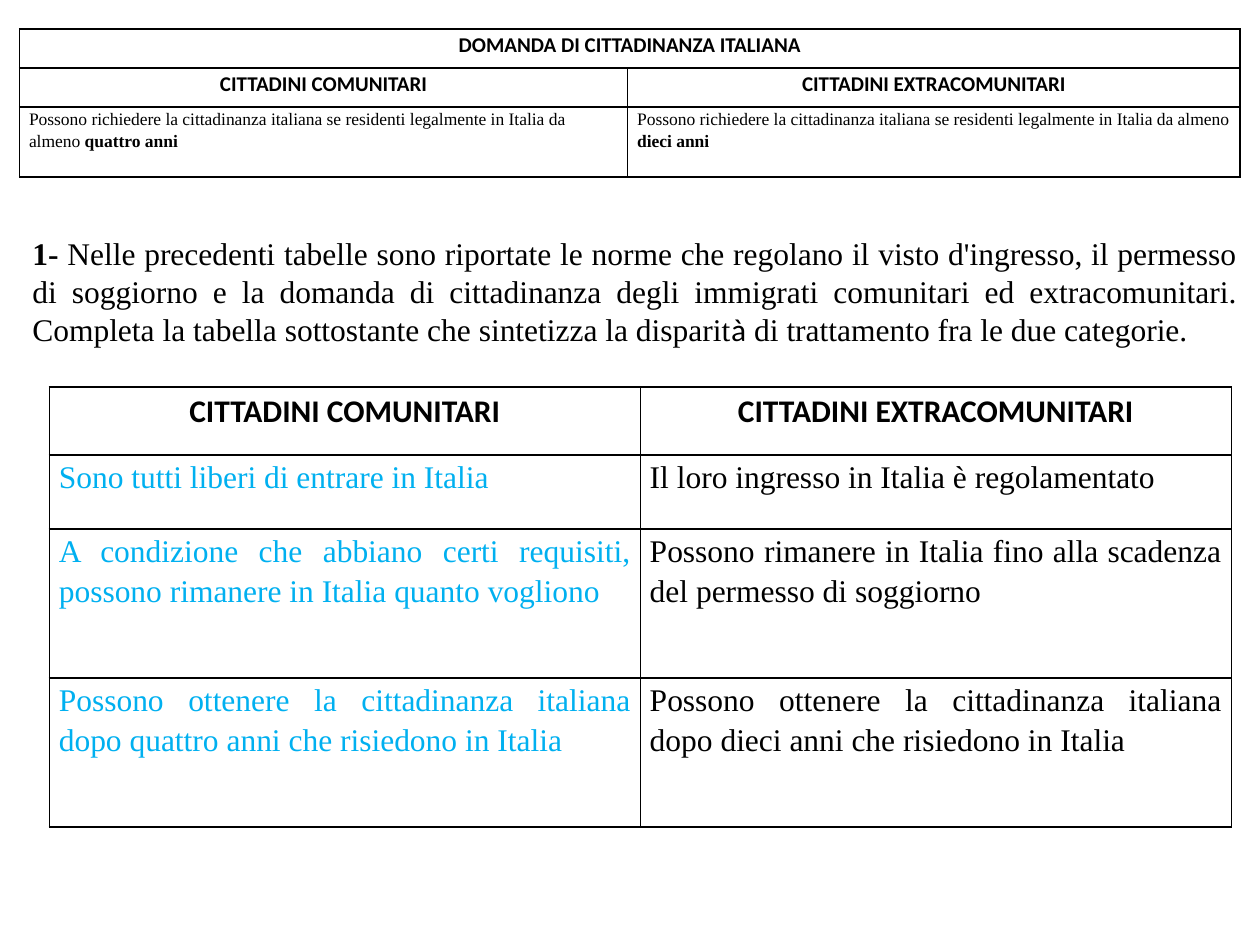
import pptx
import pptx.dml.color
import pptx.enum.text
import pptx.oxml
import pptx.oxml.ns
import pptx.util

Pt = pptx.util.Pt
ALIGN = pptx.enum.text.PP_ALIGN
COLORS = {"ink": "000000", "answer": "00B0F0", "paper": "FFFFFF"}
HEADING, BODY = "Calibri", "Times New Roman"


class SlideBuilder:
    """Hold the style and the current slide, and add its elements."""

    def __init__(self, slide):
        self.slide = slide

    def color(self, name):
        return pptx.dml.color.RGBColor.from_string(COLORS[name])

    def add_runs(self, paragraph, runs, size, align, color="ink"):
        paragraph.alignment = align
        for text, font, bold in runs:
            run = paragraph.add_run()
            run.text = text
            run.font.name = font
            run.font.size = Pt(size)
            run.font.bold = bold
            run.font.color.rgb = self.color(color)

    def add_text(self, left, top, width, height, runs, size):
        frame = self.slide.shapes.add_textbox(Pt(left), Pt(top), Pt(width), Pt(height)).text_frame
        frame.word_wrap = True
        frame.auto_size = pptx.enum.text.MSO_AUTO_SIZE.SHAPE_TO_FIT_TEXT
        frame.vertical_anchor = pptx.enum.text.MSO_ANCHOR.MIDDLE
        self.add_runs(frame.paragraphs[0], runs, size, ALIGN.JUSTIFY)

    def add_table(self, left, top, widths, heights):
        table = self.slide.shapes.add_table(
            len(heights), len(widths), Pt(left), Pt(top), Pt(sum(widths)), Pt(sum(heights))
        ).table
        table.first_row = table.horz_banding = False
        for column, width in zip(table.columns, widths):
            column.width = Pt(width)
        for row, height in zip(table.rows, heights):
            row.height = Pt(height)
        for cell in table.iter_cells():
            self.frame_cell(cell)
        return table

    def frame_cell(self, cell):
        properties = cell._tc.get_or_add_tcPr()
        for side in ("lnL", "lnR", "lnT", "lnB"):
            properties.append(pptx.oxml.parse_xml(
                f'<a:{side} {pptx.oxml.ns.nsdecls("a")} w="{Pt(1)}"><a:solidFill>'
                f'<a:srgbClr val="{COLORS["ink"]}"/></a:solidFill></a:{side}>'
            ))
        cell.fill.solid()
        cell.fill.fore_color.rgb = self.color("paper")
        cell.margin_left = cell.margin_right = Pt(5.4)
        cell.margin_top = cell.margin_bottom = 0

    def fill_cell(self, cell, runs, size, align, color="ink"):
        paragraph = cell.text_frame.paragraphs[0]
        paragraph.line_spacing = 1.15
        paragraph.space_after = Pt(10)
        self.add_runs(paragraph, runs, size, align, color)


def main():
    deck = pptx.Presentation()
    deck.slide_width, deck.slide_height = Pt(720), Pt(540)
    builder = SlideBuilder(deck.slides.add_slide(deck.slide_layouts[6]))

    categories = ("CITTADINI COMUNITARI", "CITTADINI EXTRACOMUNITARI")
    requirement = "Possono richiedere la cittadinanza italiana se residenti legalmente in Italia da almeno "
    periods = ("quattro anni", "dieci anni")

    application = builder.add_table(11.2, 16.7, (347.5, 350), (22.2, 22.2, 40))
    application.cell(0, 0).merge(application.cell(0, 1))
    heading = [("DOMANDA DI CITTADINANZA ITALIANA", HEADING, True)]
    builder.fill_cell(application.cell(0, 0), heading, 12, ALIGN.CENTER)
    for column, (category, period) in enumerate(zip(categories, periods)):
        builder.fill_cell(application.cell(1, column), [(category, HEADING, True)], 12, ALIGN.CENTER)
        rule = [(requirement, BODY, False), (period, BODY, True)]
        builder.fill_cell(application.cell(2, column), rule, 10, ALIGN.LEFT)

    exercise = [
        ("1- ", BODY, True),
        ("Nelle precedenti tabelle sono riportate le norme che regolano il visto d'ingresso, "
         "il permesso di soggiorno e la domanda di cittadinanza degli immigrati comunitari ed "
         "extracomunitari. Completa la tabella sottostante che sintetizza la disparit", BODY, False),
        ("à", HEADING, False),
        (" di trattamento fra le due categorie.", BODY, False),
    ]
    builder.add_text(11.4, 129.8, 703.2, 72.7, exercise, 18)

    treatments = (
        ("Sono tutti liberi di entrare in Italia",
         "Il loro ingresso in Italia è regolamentato"),
        ("A condizione che abbiano certi requisiti, possono rimanere in Italia quanto vogliono",
         "Possono rimanere in Italia fino alla scadenza del permesso di soggiorno"),
        tuple(f"Possono ottenere la cittadinanza italiana dopo {period} che risiedono in Italia"
              for period in periods),
    )
    comparison = builder.add_table(28.2, 221.2, (337.7, 337.7), (38.8, 42.4, 85.1, 85.1))
    for column, category in enumerate(categories):
        builder.fill_cell(comparison.cell(0, column), [(category, HEADING, True)], 18, ALIGN.CENTER)
    for row, treatment in enumerate(treatments, 1):
        for column, (norm, color) in enumerate(zip(treatment, ("answer", "ink"))):
            builder.fill_cell(
                comparison.cell(row, column), [(norm, BODY, False)], 18, ALIGN.JUSTIFY, color)

    deck.save("out.pptx")


if __name__ == "__main__":
    main()
